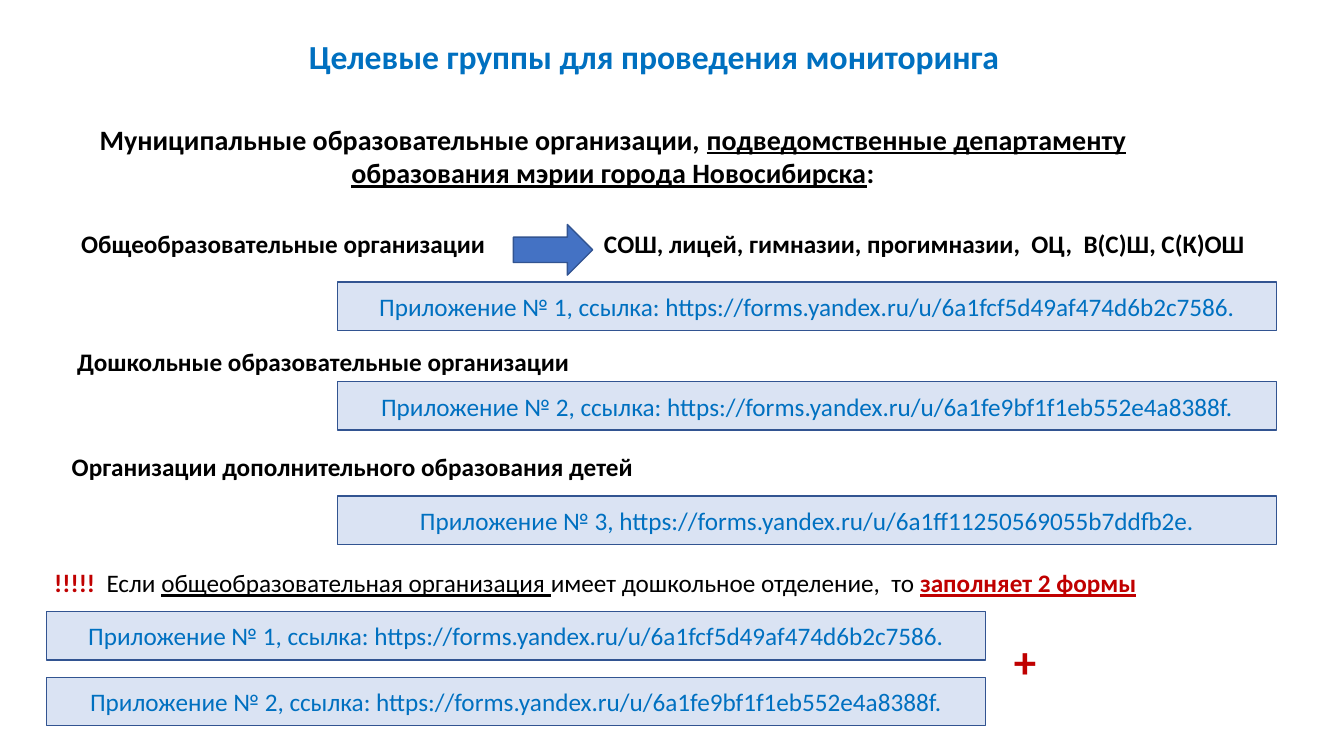
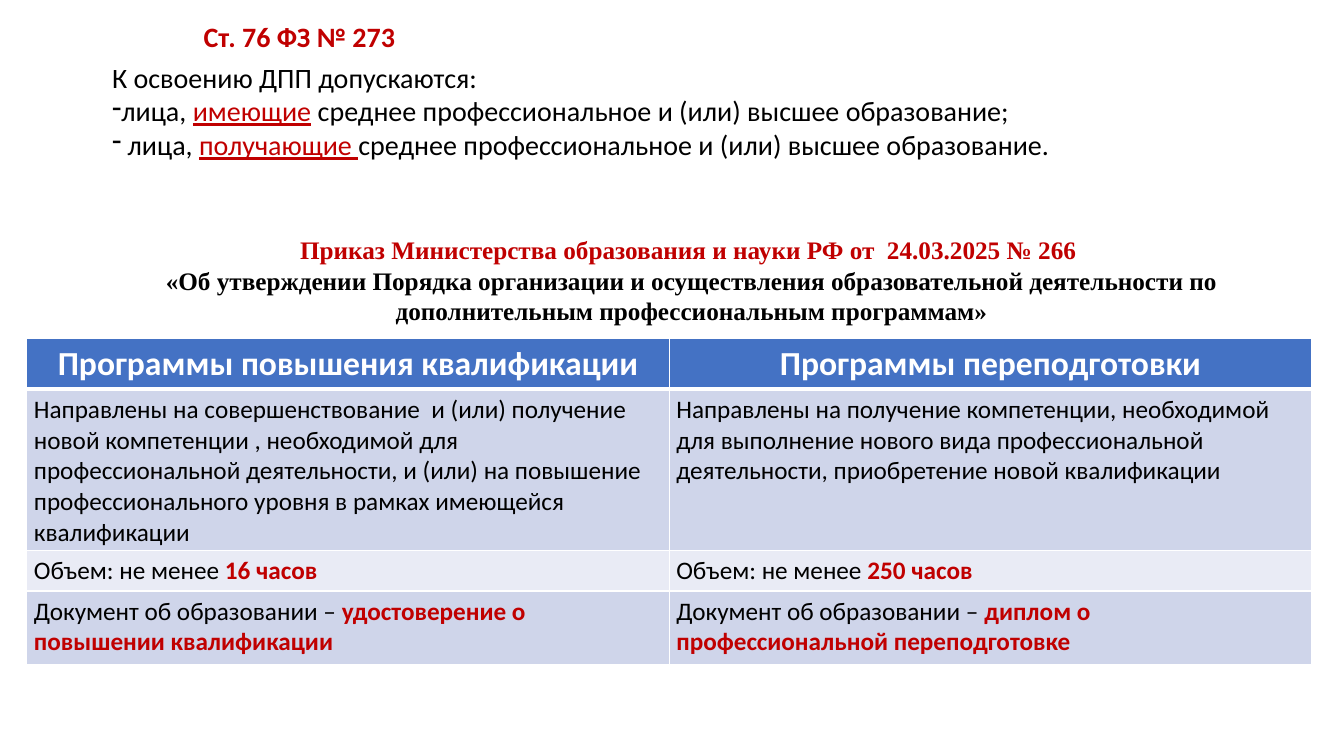
from lxml import etree
from pptx import Presentation
from pptx.dml.color import RGBColor
from pptx.enum.shapes import MSO_SHAPE
from pptx.enum.text import MSO_ANCHOR, MSO_AUTO_SIZE, PP_ALIGN
from pptx.oxml.ns import qn
from pptx.util import Inches, Pt

LEFT, CENTER = PP_ALIGN.LEFT, PP_ALIGN.CENTER
TOP, MIDDLE = MSO_ANCHOR.TOP, MSO_ANCHOR.MIDDLE
FIXED_SIZE = MSO_AUTO_SIZE.NONE
RECTANGLE, RIGHT_ARROW = MSO_SHAPE.RECTANGLE, MSO_SHAPE.RIGHT_ARROW
TITLE_ONLY = 5

BLACK = RGBColor(0x00, 0x00, 0x00)
WHITE = RGBColor(0xFF, 0xFF, 0xFF)
RED = RGBColor(0xC0, 0x00, 0x00)
LINK_BLUE = RGBColor(0x00, 0x70, 0xC0)
ACCENT = RGBColor(0x44, 0x72, 0xC4)
OUTLINE = RGBColor(0x32, 0x54, 0x91)
PALE_BLUE = RGBColor(0xDA, 0xE3, 0xF3)
BAND_DARK = RGBColor(0xCF, 0xD5, 0xEA)
BAND_LIGHT = RGBColor(0xE9, 0xEB, 0xF5)

UNDERLINED = {"underline": True}
RED_UNDERLINED = {"color": RED, "underline": True}
RED_BOLD = {"color": RED, "bold": True}


def add_span(para, text, size=18, color=BLACK, bold=False, underline=False,
             font="Calibri"):
    span = para.add_run()
    span.text = text
    span.font.name = font
    span.font.size = Pt(size)
    span.font.bold = bold
    span.font.underline = underline
    span.font.color.rgb = color


class SlideBuilder:
    """Holds the style and current slide; lengths are percent of the slide."""

    def __init__(self):
        self.deck = Presentation()
        self.deck.slide_width = Inches(13.33)
        self.deck.slide_height = Inches(7.5)
        self.slide = None

    def across(self, share):
        return round(self.deck.slide_width * share / 100)

    def down(self, share):
        return round(self.deck.slide_height * share / 100)

    def place(self, left, top, width, height):
        return (self.across(left), self.down(top),
                self.across(width), self.down(height))

    def fill_text(self, frame, paragraphs, align=LEFT, anchor=TOP, **style):
        """Each paragraph is a list of strings or (string, format) pairs."""
        frame.word_wrap = True
        frame.vertical_anchor = anchor
        for index, spans in enumerate(paragraphs):
            para = frame.add_paragraph() if index else frame.paragraphs[0]
            para.alignment = align
            for span in spans:
                text, extra = (span, {}) if isinstance(span, str) else span
                add_span(para, text, **{**style, **extra})

    def new_slide(self, title, area, **style):
        layout = self.deck.slide_layouts[TITLE_ONLY]
        self.slide = self.deck.slides.add_slide(layout)
        box = self.slide.shapes.title
        box.left, box.top, box.width, box.height = self.place(*area)
        box.text_frame.auto_size = FIXED_SIZE
        self.fill_text(box.text_frame, [[title]], bold=True, **style)

    def text(self, area, *paragraphs, **style):
        box = self.slide.shapes.add_textbox(*self.place(*area))
        self.fill_text(box.text_frame, paragraphs, **style)
        return box

    def shape(self, kind, area, fill):
        box = self.slide.shapes.add_shape(kind, *self.place(*area))
        box.shadow.inherit = False
        box.fill.solid()
        box.fill.fore_color.rgb = fill
        box.line.color.rgb = OUTLINE
        box.line.width = Pt(1)
        return box

    def link_box(self, left, top, text):
        box = self.shape(RECTANGLE, (left, top, 69.9, 6.4), PALE_BLUE)
        self.fill_text(box.text_frame, [[text]], CENTER, MIDDLE,
                       color=LINK_BLUE)

    def dash_bullet(self, para):
        properties = para._p.get_or_add_pPr()
        properties.set("marL", "0")
        properties.set("indent", "0")
        etree.SubElement(properties, qn("a:buChar")).set("char", "-")

    def border(self, cell, bottom):
        properties = cell._tc.get_or_add_tcPr()
        widths = {"a:lnL": 1, "a:lnR": 1, "a:lnT": 1, "a:lnB": bottom}
        for index, (tag, width) in enumerate(widths.items()):
            line = etree.Element(qn(tag), w=str(Pt(width)))
            fill = etree.SubElement(line, qn("a:solidFill"))
            etree.SubElement(fill, qn("a:srgbClr")).set("val", str(WHITE))
            properties.insert(index, line)

    def table(self, area, heights, rows):
        table = self.slide.shapes.add_table(
            len(rows), len(rows[0]), *self.place(*area)).table
        for index, (height, row) in enumerate(zip(heights, rows)):
            table.rows[index].height = self.down(height)
            header = index == 0
            band = BAND_DARK if index % 2 else BAND_LIGHT
            style = (dict(size=24, color=WHITE, bold=True, align=CENTER)
                     if header else {})
            for cell, spans in zip(table.rows[index].cells, row):
                cell.margin_left = cell.margin_right = Inches(0.07)
                cell.margin_top = cell.margin_bottom = Inches(0.05)
                cell.fill.solid()
                cell.fill.fore_color.rgb = ACCENT if header else band
                self.border(cell, 3 if header else 1)
                self.fill_text(cell.text_frame, [spans], **style)


def build_target_groups(builder):
    builder.new_slide("Целевые группы для проведения мониторинга ",
                      (12.75, 4.1, 72.4, 6.7), size=24, color=LINK_BLUE,
                      align=CENTER)
    builder.text((4.6, 15.5, 82, 10.3),
                 ["Муниципальные образовательные организации, ",
                  ("подведомственные департаменту образования мэрии "
                   "города Новосибирска", UNDERLINED), ":"],
                 size=20, bold=True, align=CENTER)

    # Groups of organisations
    groups = [
        (5.3, 29.5, 33, "Общеобразовательные организации"),
        (44.2, 29.5, 52,
         "СОШ, лицей, гимназии, прогимназии,  ОЦ,  В(С)Ш, С(К)ОШ"),
        (5, 45.1, 60, "Дошкольные образовательные организации"),
        (4.6, 59.1, 60, "Организации дополнительного образования детей"),
    ]
    for left, top, width, text in groups:
        builder.text((left, top, width, 5.3), [text], bold=True)
    builder.shape(RIGHT_ARROW, (38.2, 29.7, 5.9, 6.7), ACCENT)

    # Links to the forms
    school = ("Приложение № 1, ссылка: "
              "https://forms.yandex.ru/u/6a1fcf5d49af474d6b2c7586.")
    preschool = ("Приложение № 2, ссылка: "
                 "https://forms.yandex.ru/u/6a1fe9bf1f1eb552e4a8388f.")
    additional = ("Приложение № 3, "
                  "https://forms.yandex.ru/u/6a1ff11250569055b7ddfb2e.")
    for left, top, text in [(25.1, 37.3, school), (25.1, 50.5, preschool),
                            (25.1, 65.6, additional),
                            (3.45, 80.9, school), (3.45, 89.6, preschool)]:
        builder.link_box(left, top, text)

    # Two forms at once
    builder.text((3.3, 74.4, 90.4, 5.3),
                 [("!!!!!  ", RED_BOLD), "Если ",
                  ("общеобразовательная организация ", UNDERLINED),
                  "имеет дошкольное отделение,  то ",
                  ("заполняет 2 формы", {**RED_BOLD, **UNDERLINED})])
    builder.text((74.7, 83.1, 7.7, 8.5), ["+"], size=32, **RED_BOLD)


def build_programmes(builder):
    builder.new_slide("Ст. 76 ФЗ № 273", (14.4, 1.9, 28.4, 5.9),
                      size=20, color=RED)

    # Who is admitted
    admitted = builder.text(
        (7.6, 7.3, 87, 14.8),
        ["К освоению ДПП допускаются:"],
        ["лица, ", ("имеющие", RED_UNDERLINED),
         " среднее профессиональное и (или) высшее образование;"],
        [" лица, ", ("получающие ", RED_UNDERLINED),
         "среднее профессиональное и (или) высшее образование."],
        size=20)
    for para in admitted.text_frame.paragraphs[1:]:
        builder.dash_bullet(para)

    # Ministry order
    builder.text(
        (6.45, 30.4, 90, 13.3),
        [("Приказ Министерства образования и науки РФ от  "
          "24.03.2025 № 266 ", {"color": RED})],
        ["«Об утверждении Порядка организации и осуществления "
         "образовательной деятельности по дополнительным "
         "профессиональным программам»"],
        font="Times New Roman", bold=True, align=CENTER)

    # Comparison of programmes
    volume, document = "Объем: не менее ", "Документ об образовании – "
    builder.table((2, 44.8, 95.6, 43), (6.7, 21.2, 5.3, 9.8), [
        [["Программы повышения квалификации"],
         ["Программы переподготовки"]],
        [["Направлены на совершенствование  и (или) получение новой "
          "компетенции , необходимой для профессиональной деятельности, "
          "и (или) на повышение профессионального уровня в рамках "
          "имеющейся  квалификации"],
         ["Направлены на получение компетенции, необходимой для "
          "выполнение нового вида профессиональной деятельности, "
          "приобретение новой квалификации"]],
        [[volume, ("16 часов", RED_BOLD)],
         [volume, ("250 часов", RED_BOLD)]],
        [[document, ("удостоверение о повышении квалификации", RED_BOLD)],
         [document, ("диплом о профессиональной переподготовке", RED_BOLD)]],
    ])


def main():
    builder = SlideBuilder()
    build_target_groups(builder)
    build_programmes(builder)
    builder.deck.save("out.pptx")


if __name__ == "__main__":
    main()
